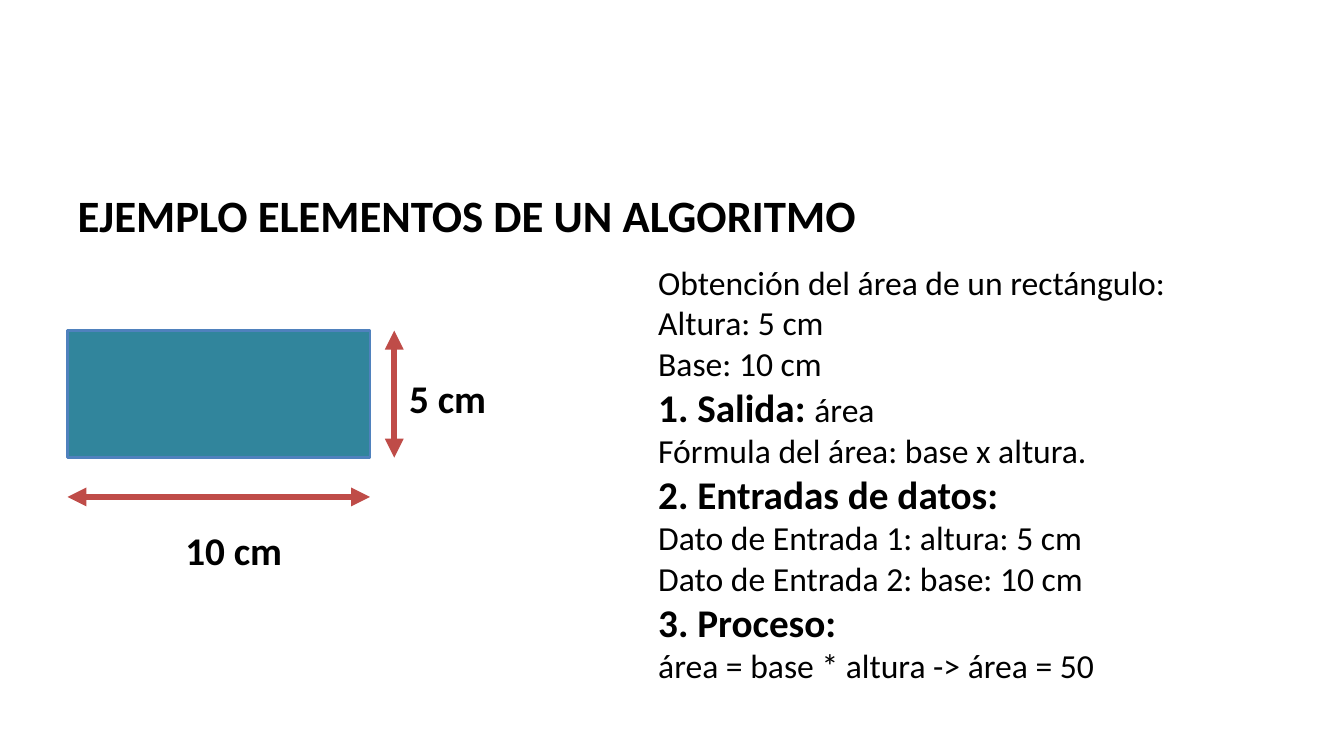
from pptx import Presentation
from pptx.dml.color import RGBColor
from pptx.enum.shapes import MSO_CONNECTOR, MSO_SHAPE
from pptx.enum.text import MSO_ANCHOR, MSO_AUTO_SIZE, PP_ALIGN
from pptx.oxml.ns import qn
from pptx.util import Pt
from lxml import etree

PX = 9144  # 100 px to the inch
FONT = "Calibri"
COLORS = {"text": "000000", "fill": "31859C", "edge": "4F81BD", "arrow": "BF4C48"}
RECT = MSO_SHAPE.RECTANGLE
STRAIGHT = MSO_CONNECTOR.STRAIGHT
LEFT = PP_ALIGN.LEFT
TOP = MSO_ANCHOR.TOP
GROW = MSO_AUTO_SIZE.SHAPE_TO_FIT_TEXT

TITLE = "EJEMPLO ELEMENTOS DE UN ALGORITMO"
# Each line: bold heading, plain text
STEPS = [
    ("", "Obtención del área de un rectángulo:"),
    ("", "Altura: 5 cm"),
    ("", "Base: 10 cm"),
    ("1. Salida: ", "área"),
    ("", "Fórmula del área: base x altura."),
    ("2. Entradas de datos:", ""),
    ("", "Dato de Entrada 1: altura: 5 cm"),
    ("", "Dato de Entrada 2: base: 10 cm"),
    ("3. Proceso:", ""),
    ("", "área = base * altura -> área = 50"),
]


def emu(*sizes):
    return [size * PX for size in sizes]


def rgb(name):
    return RGBColor.from_string(COLORS[name])


def write(shape, lines):
    """Fill a shape with lines, each a list of (text, size, bold)."""
    frame = shape.text_frame
    frame.word_wrap = True
    frame.auto_size = GROW
    frame.vertical_anchor = TOP
    for i, runs in enumerate(lines):
        para = frame.add_paragraph() if i else frame.paragraphs[0]
        para.alignment = LEFT
        for text, size, bold in runs:
            run = para.add_run()
            run.text = text
            font = run.font
            font.name, font.size, font.bold = FONT, Pt(size), bold
            font.color.rgb = rgb("text")


def label(slide, x, y, text):
    box = slide.shapes.add_textbox(*emu(x, y, 173, 57))
    write(box, [[(text, 28, True)]])


def arrow(slide, x1, y1, x2, y2):
    line = slide.shapes.add_connector(STRAIGHT, *emu(x1, y1, x2, y2))
    line.line.color.rgb = rgb("arrow")
    line.line.width = Pt(4.5)
    props = line.line._get_or_add_ln()
    for end in ("a:headEnd", "a:tailEnd"):
        etree.SubElement(props, qn(end), type="triangle")
    etree.SubElement(props.getparent(), qn("a:effectLst"))


def heading(slide, x, y, w, h):
    title = slide.shapes.title
    title.left, title.top, title.width, title.height = emu(x, y, w, h)
    write(title, [[(TITLE, 32, True)]])


def steps(slide, x, y, w, h):
    box = slide.shapes.add_textbox(*emu(x, y, w, h))
    write(box, [[run for run in ((head, 28, True), (body, 24, False)) if run[0]]
                for head, body in STEPS])


def figure(slide, x, y, w, h):
    # Rectangle
    rect = slide.shapes.add_shape(RECT, *emu(x, y, w, h))
    rect.shadow.inherit = False
    rect.fill.solid()
    rect.fill.fore_color.rgb = rgb("fill")
    rect.line.color.rgb = rgb("edge")
    rect.line.width = Pt(2)
    # Base
    base = y + h + 39
    arrow(slide, x, base, x + w, base)
    label(slide, x + 107, base + 24, "10 cm")
    # Height
    side = x + w + 24
    arrow(slide, side, y, side, y + h)
    label(slide, side + 5, y + 38, "5 cm")


def main():
    deck = Presentation()
    deck.slide_width, deck.slide_height = emu(1333, 750)
    slide = deck.slides.add_slide(deck.slide_layouts[5])
    heading(slide, 67, 181, 804, 64)
    steps(slide, 643, 255, 598, 434)
    figure(slide, 67, 328, 300, 126)
    deck.save("out.pptx")


if __name__ == "__main__":
    main()
